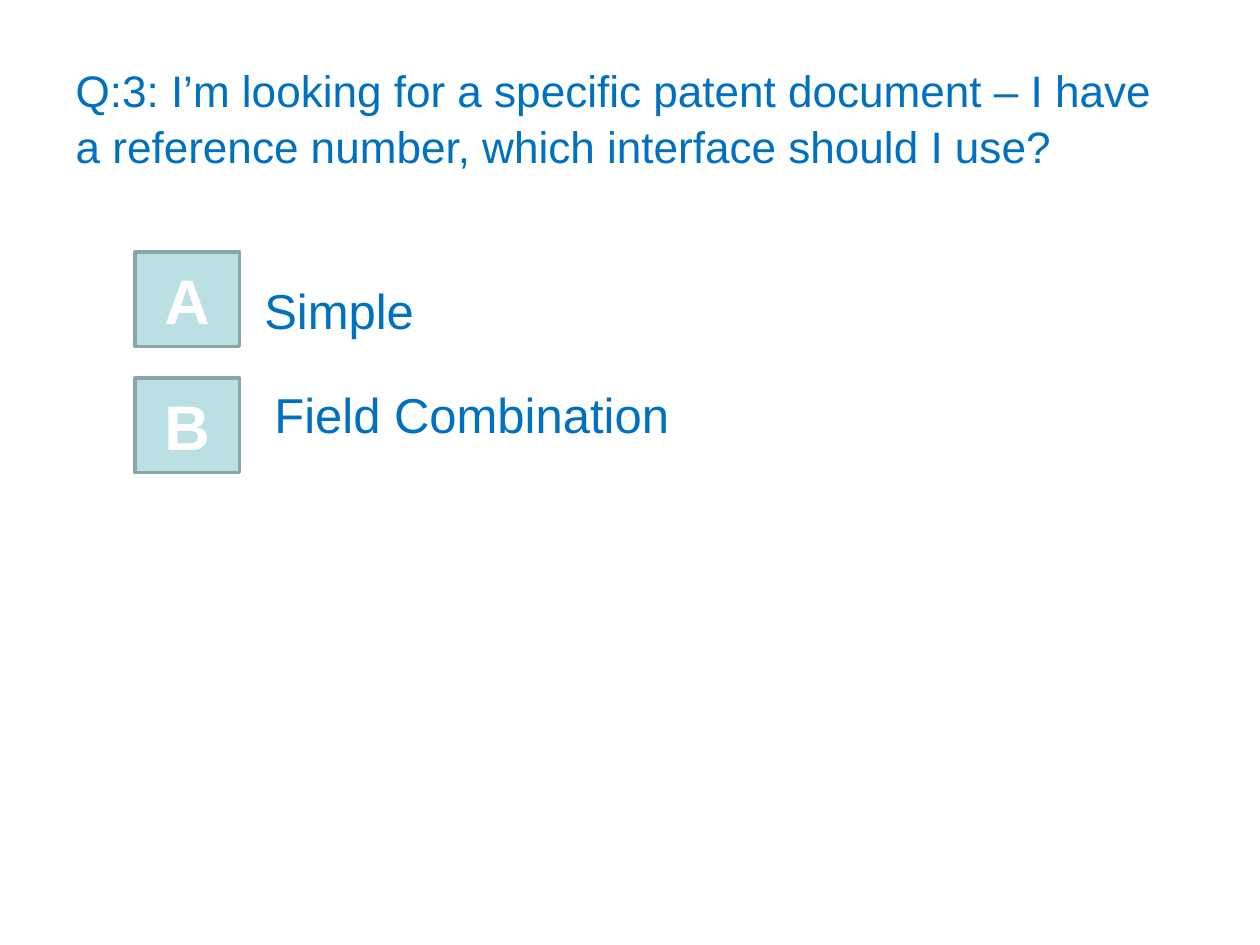
from pptx import Presentation, util as u
from pptx.dml.color import RGBColor
from pptx.enum import shapes, text

QUESTION = ("Q:3: I’m looking for a specific patent document – I have "
            "a reference number, which interface should I use?")
# letter, answer, then left, top, width and height of the answer in inches
ANSWERS = [
    ("A", "Simple", (2, 2.18, 4.92, 0.55)),
    ("B", "Field Combination", (2.08, 3, 3.92, 0.75)),
]
COLORS = {"text": "0070C0", "button": "BBE0E3", "border": "8AA6A8", "letter": "FFFFFF"}
BUTTON_LEFT, BUTTON_TOP, BUTTON_WIDTH, BUTTON_HEIGHT = 1.07, 2, 0.83, 0.75
ROW_STEP = 1


def color(name):
    return RGBColor.from_string(COLORS[name])


def inches(*lengths):
    return [u.Inches(length) for length in lengths]


def write(shape, words, size, color_name, anchor, align, bold=False):
    frame = shape.text_frame
    frame.text = words
    frame.word_wrap = True
    frame.auto_size = text.MSO_AUTO_SIZE.NONE
    frame.vertical_anchor = anchor
    paragraph = frame.paragraphs[0]
    paragraph.alignment = align
    font = paragraph.runs[0].font
    font.name, font.size, font.bold = "Arial", u.Pt(size), bold
    font.color.rgb = color(color_name)
    return paragraph


def add_button(slide, letter, top):
    button = slide.shapes.add_shape(
        shapes.MSO_SHAPE.ACTION_BUTTON_CUSTOM,
        *inches(BUTTON_LEFT, top, BUTTON_WIDTH, BUTTON_HEIGHT))
    button.shadow.inherit = False
    button.fill.solid()
    button.fill.fore_color.rgb = color("button")
    button.line.color.rgb = color("border")
    button.line.width = u.Pt(2)
    write(button, letter, 36, "letter", text.MSO_ANCHOR.MIDDLE,
          text.PP_ALIGN.CENTER, bold=True)


def main():
    presentation = Presentation()
    presentation.slide_width, presentation.slide_height = inches(10, 7.5)
    slide = presentation.slides.add_slide(presentation.slide_layouts.get_by_name("Title Only"))

    title = slide.shapes.title
    title.left, title.top, title.width, title.height = inches(0.5, 0.3, 9, 1.25)
    heading = write(title, QUESTION, 25.2, "text", text.MSO_ANCHOR.MIDDLE, text.PP_ALIGN.LEFT)
    heading.line_spacing = 1.05

    for row, (letter, answer, box) in enumerate(ANSWERS):
        add_button(slide, letter, BUTTON_TOP + row * ROW_STEP)
        label = slide.shapes.add_textbox(*inches(*box))
        write(label, answer, 28, "text", text.MSO_ANCHOR.TOP, text.PP_ALIGN.LEFT)

    presentation.save("out.pptx")


if __name__ == "__main__":
    main()
